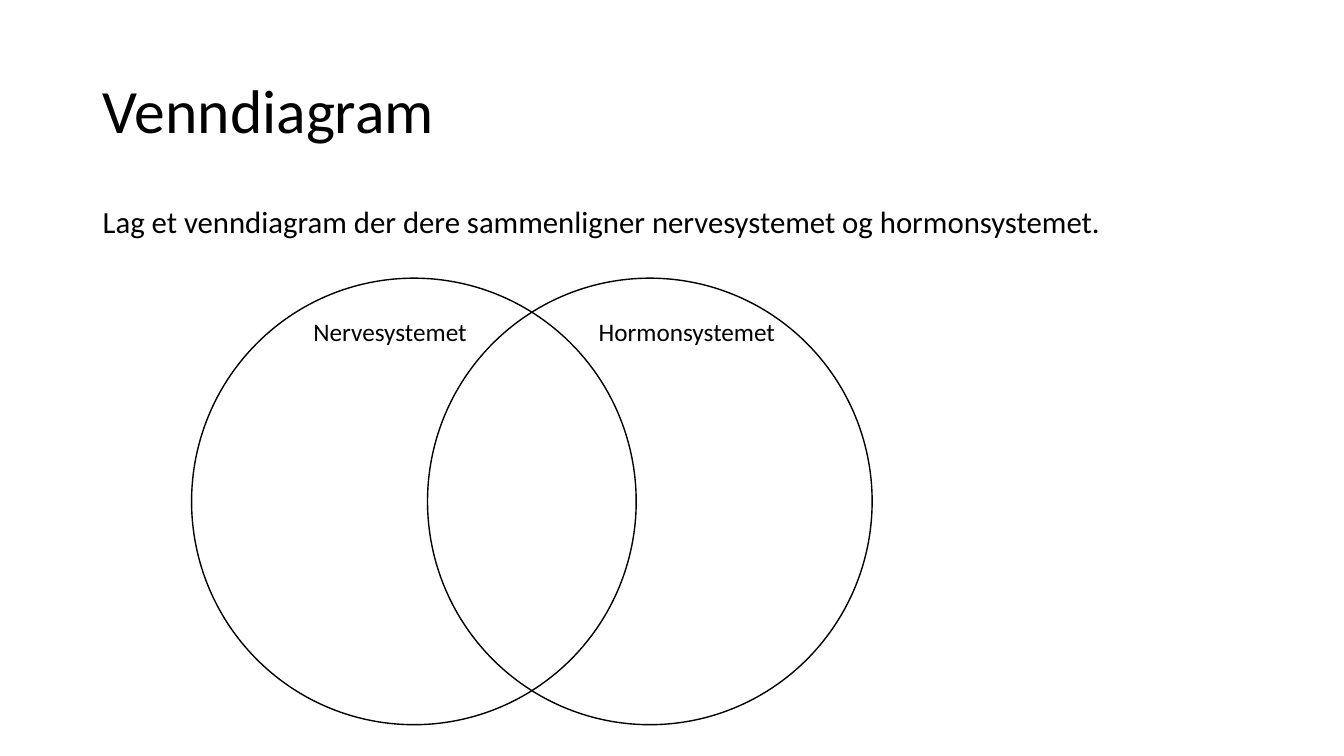
"""Build a slide with a two-circle Venn diagram of the nervous and hormone systems."""
from pptx import Presentation
from pptx.dml.color import RGBColor
from pptx.enum.shapes import MSO_SHAPE as Shape
from pptx.enum.text import MSO_ANCHOR as Anchor, PP_ALIGN as Align
from pptx.util import Inches, Pt

TITLE = "Venndiagram"
TASK = "Lag et venndiagram der dere sammenligner nervesystemet og hormonsystemet."
SYSTEMS = [("Nervesystemet", 3.01, 1.89), ("Hormonsystemet", 5.84, 2.06)]
COLORS = {"ink": "000000"}
FONT = "Calibri"
WIDTH, HEIGHT = 13.33, 7.5
MARGIN, CONTENT_WIDTH = 0.92, 11.5
CIRCLE_LEFT, CIRCLE_TOP, CIRCLE_STEP = 1.9, 2.76, 2.34
CIRCLE_SIZE = (4.41, 4.43)
LABEL_TOP, LABEL_HEIGHT = 3.09, 0.4


def ink():
    return RGBColor.from_string(COLORS["ink"])


def box(*lengths):
    return [Inches(length) for length in lengths]


def write(frame, text, size, anchor=Anchor.TOP, **spacing):
    frame.word_wrap = True
    frame.vertical_anchor = anchor
    paragraph = frame.paragraphs[0]
    paragraph.alignment = Align.LEFT
    for name, value in spacing.items():
        setattr(paragraph, name, value)
    run = paragraph.add_run()
    run.text = text
    for name, value in {"name": FONT, "size": Pt(size)}.items():
        setattr(run.font, name, value)
    run.font.color.rgb = ink()


def main():
    deck = Presentation()
    deck.slide_width, deck.slide_height = box(WIDTH, HEIGHT)
    slide = deck.slides.add_slide(deck.slide_layouts[5])
    shapes = slide.shapes

    title = shapes.title
    title.left, title.top, title.width, title.height = box(MARGIN, 0.4, CONTENT_WIDTH, 1.45)
    write(title.text_frame, TITLE, 44, Anchor.MIDDLE, line_spacing=0.9)

    task = shapes.add_textbox(*box(MARGIN, 2, CONTENT_WIDTH, 4.76))
    write(task.text_frame, TASK, 22, line_spacing=0.9, space_before=Pt(10))

    for column in range(len(SYSTEMS)):
        left = CIRCLE_LEFT + column * CIRCLE_STEP
        circle = shapes.add_shape(Shape.OVAL, *box(left, CIRCLE_TOP, *CIRCLE_SIZE))
        circle.shadow.inherit = False
        circle.fill.background()
        circle.line.color.rgb = ink()
        circle.line.width = Pt(1)

    for system, left, width in SYSTEMS:
        label = shapes.add_textbox(*box(left, LABEL_TOP, width, LABEL_HEIGHT))
        write(label.text_frame, system, 18)

    deck.save("out.pptx")


if __name__ == "__main__":
    main()
